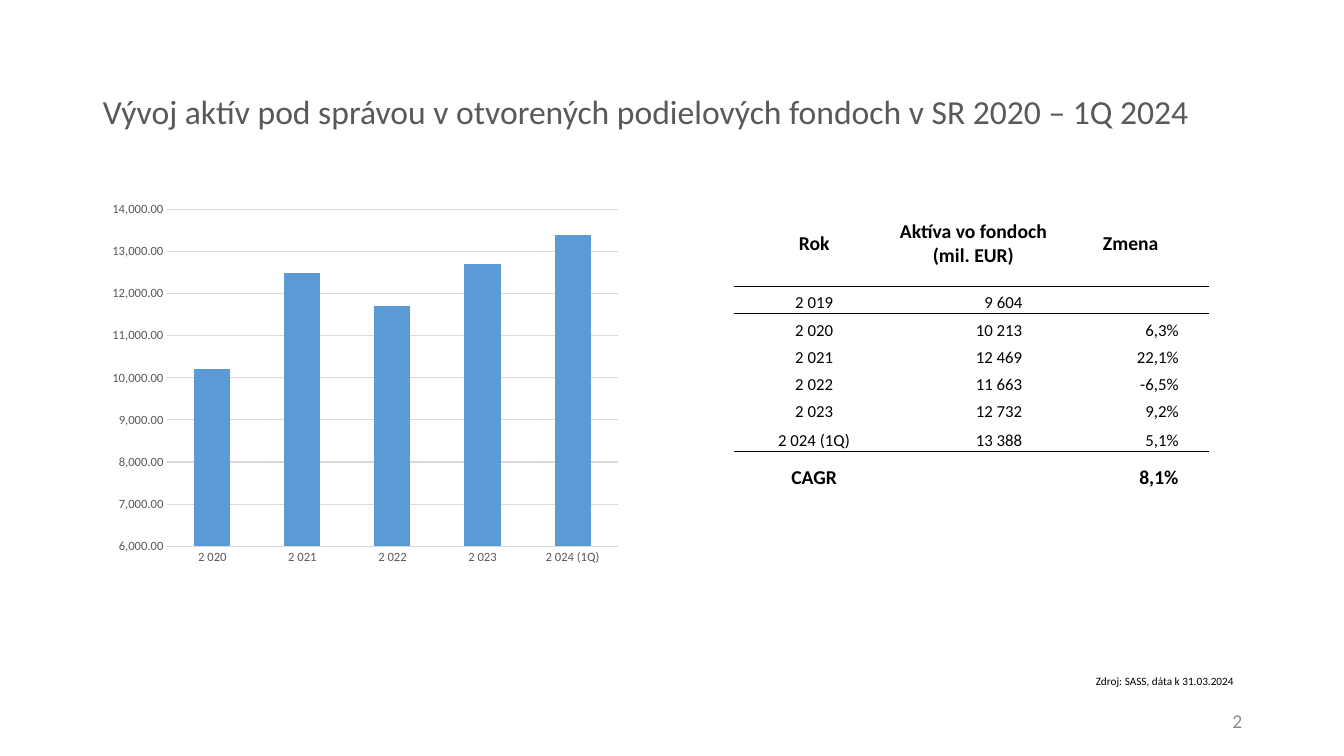
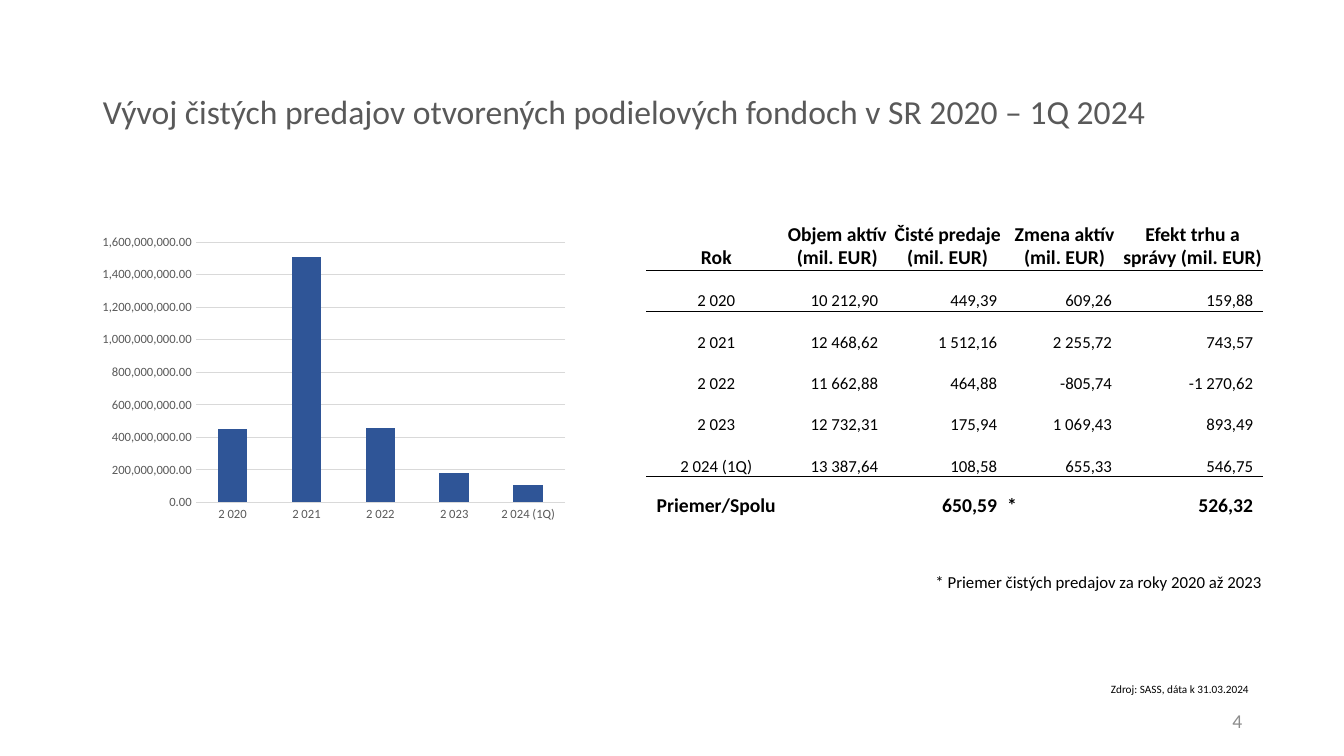
from dataclasses import dataclass

import pptx
import pptx.chart.data
import pptx.dml.color
import pptx.enum.chart
import pptx.enum.text
import pptx.util
from lxml import etree
from pptx.oxml.ns import qn

Inches = pptx.util.Inches
Pt = pptx.util.Pt
Align = pptx.enum.text.PP_ALIGN
Anchor = pptx.enum.text.MSO_ANCHOR


@dataclass(frozen=True)
class Theme:
    font: str = "Calibri"
    ink: str = "000000"
    grey: str = "595959"
    page_grey: str = "8C8C8C"
    grid: str = "D9D9D9"
    light_blue: str = "5B9BD5"
    dark_blue: str = "2F5597"
    title_size: int = 24
    strong_size: int = 14
    body_size: int = 12
    axis_size: int = 9
    source_size: int = 8


THEME = Theme()
PLAIN_TABLE_STYLE = "{2D5ABB26-0587-4C30-8999-92F81FD0307C}"
YEARS = ["2 020", "2 021", "2 022", "2 023", "2 024 (1Q)"]
SOURCE = "Zdroj: SASS, dáta k 31.03.2024"


def rgb(value):
    return pptx.dml.color.RGBColor.from_string(value)


def set_font(font, size, color, bold=False):
    font.name = THEME.font
    font.size = Pt(size)
    font.bold = bold
    font.color.rgb = rgb(color)


def write_text(frame, text, *, size, color=THEME.ink, bold=False,
               align=Align.LEFT, line_spacing=None):
    """Fill a text frame, one paragraph per line of text."""
    for index, line in enumerate(text.split("\n")):
        paragraph = frame.add_paragraph() if index else frame.paragraphs[0]
        paragraph.alignment = align
        if line_spacing:
            paragraph.line_spacing = line_spacing
        if line:
            run = paragraph.add_run()
            run.text = line
            set_font(run.font, size, color, bold)
        else:
            # An empty cell keeps the row at its own text size
            etree.SubElement(paragraph._p, qn("a:endParaRPr"), sz=str(size * 100))


def add_title(slide, text):
    title = slide.shapes.title
    title.left, title.top = Inches(0.92), Inches(0.4)
    title.width, title.height = Inches(11.94), Inches(1.45)
    frame = title.text_frame
    frame.auto_size = pptx.enum.text.MSO_AUTO_SIZE.NONE
    frame.vertical_anchor = Anchor.MIDDLE
    write_text(frame, text, size=THEME.title_size, color=THEME.grey,
               line_spacing=0.9)


def add_label(slide, text, box, anchor=Anchor.TOP, **text_format):
    frame = slide.shapes.add_textbox(*map(Inches, box)).text_frame
    frame.word_wrap = True
    frame.vertical_anchor = anchor
    write_text(frame, text, **text_format)


def add_column_chart(slide, box, name, values, color, scale):
    """Draw one series by year; scale is minimum, maximum and step."""
    data = pptx.chart.data.CategoryChartData(number_format="#,##0.00")
    data.categories = YEARS
    data.add_series(name, values)
    chart = slide.shapes.add_chart(
        pptx.enum.chart.XL_CHART_TYPE.COLUMN_CLUSTERED,
        *map(Inches, box), data).chart
    chart.has_title = False
    chart.has_legend = False
    set_font(chart.font, 10, THEME.ink)

    # Bars
    plot = chart.plots[0]
    plot.gap_width = 150
    plot.vary_by_categories = False
    fill = plot.series[0].format.fill
    fill.solid()
    fill.fore_color.rgb = rgb(color)

    # Axes
    for axis in (chart.category_axis, chart.value_axis):
        axis.major_tick_mark = pptx.enum.chart.XL_TICK_MARK.NONE
        axis.minor_tick_mark = pptx.enum.chart.XL_TICK_MARK.NONE
        axis.format.line.fill.background()
        set_font(axis.tick_labels.font, THEME.axis_size, THEME.grey)
    value_axis = chart.value_axis
    value_axis.minimum_scale, value_axis.maximum_scale, value_axis.major_unit = scale
    value_axis.tick_labels.number_format = "#,##0.00"
    value_axis.tick_labels.number_format_is_linked = False
    grid_line = value_axis.major_gridlines.format.line
    grid_line.color.rgb = rgb(THEME.grid)
    grid_line.width = Pt(0.75)


def add_rule(cell, side, width):
    line = etree.SubElement(cell._tc.get_or_add_tcPr(), qn(f"a:{side}"),
                            w=str(Pt(width)))
    fill = etree.SubElement(line, qn("a:solidFill"))
    etree.SubElement(fill, qn("a:srgbClr"), val=THEME.ink)


def add_year_table(slide, position, widths, heights, rows, *,
                   header_anchor, right_inset, total_rule):
    """Header, rows by year and a total, with rules after header and years."""
    total_row = len(rows) - 1
    rules = {0: 1, total_row - 1: total_rule}
    left, top = map(Inches, position)
    table = slide.shapes.add_table(
        len(rows), len(widths), left, top,
        Inches(sum(widths)), Inches(sum(heights))).table
    table.first_row = table.horz_banding = False
    table._tbl.tblPr.find(qn("a:tableStyleId")).text = PLAIN_TABLE_STYLE
    for column, width in zip(table.columns, widths):
        column.width = Inches(width)
    for row, height in zip(table.rows, heights):
        row.height = Inches(height)

    for r, row in enumerate(rows):
        strong = r in (0, total_row)
        for c, text in enumerate(row):
            cell = table.cell(r, c)
            if r - 1 in rules:
                add_rule(cell, "lnT", rules[r - 1])
            if r in rules:
                add_rule(cell, "lnB", rules[r])
            cell.fill.background()
            if text == "*":
                align = Align.LEFT
            elif r == 0 or c == 0:
                align = Align.CENTER
            else:
                align = Align.RIGHT
            cell.margin_left = cell.margin_top = cell.margin_bottom = 0
            cell.margin_right = Inches(right_inset if align == Align.RIGHT else 0)
            cell.vertical_anchor = Anchor.BOTTOM if r else header_anchor
            write_text(cell.text_frame, text, bold=strong, align=align,
                       size=THEME.strong_size if strong else THEME.body_size)


def add_fund_slide(prs, title, page, source_position):
    slide = prs.slides.add_slide(prs.slide_layouts[5])
    add_title(slide, title)
    add_label(slide, page, (9.42, 6.95, 3, 0.4), Anchor.MIDDLE,
              size=THEME.strong_size, color=THEME.page_grey, align=Align.RIGHT)
    add_label(slide, SOURCE, (*source_position, 1.65, 0.24),
              size=THEME.source_size)
    return slide


def add_assets_slide(prs):
    slide = add_fund_slide(
        prs,
        "Vývoj aktív pod správou v otvorených podielových fondoch v SR 2020 – 1Q 2024",
        "2", (10.77, 6.64))
    add_column_chart(slide, (1.01, 1.93, 5.22, 3.75), "Aktíva vo fondoch",
                     [10200, 12500, 11700, 12700, 13400],
                     THEME.light_blue, (6000, 14000, 1000))
    assets = ["10 213", "12 469", "11 663", "12 732", "13 388"]
    changes = ["6,3%", "22,1%", "-6,5%", "9,2%", "5,1%"]
    rows = [("Rok", "Aktíva vo fondoch\n(mil. EUR)", "Zmena"),
            ("2 019", "9 604", ""),
            *zip(YEARS, assets, changes),
            ("CAGR", "", "8,1%")]
    add_year_table(slide, (7.28, 2), [1.59, 1.57, 1.55],
                   [0.84] + [0.27] * 5 + [0.29, 0.38], rows,
                   header_anchor=Anchor.MIDDLE, right_inset=0.3, total_rule=1)


def add_sales_slide(prs):
    slide = add_fund_slide(
        prs,
        "Vývoj čistých predajov otvorených podielových fondoch v SR 2020 – 1Q 2024",
        "4", (10.92, 6.72))
    add_column_chart(slide, (0.92, 2.27, 4.78, 2.96), "Čisté predaje",
                     [450e6, 1510e6, 460e6, 180e6, 110e6],
                     THEME.dark_blue, (0, 1600e6, 200e6))
    assets = ["10 212,90", "12 468,62", "11 662,88", "12 732,31", "13 387,64"]
    sales = ["449,39", "1 512,16", "464,88", "175,94", "108,58"]
    changes = ["609,26", "2 255,72", "-805,74", "1 069,43", "655,33"]
    effects = ["159,88", "743,57", "-1 270,62", "893,49", "546,75"]
    rows = [("Rok", "Objem aktív (mil. EUR)", "Čisté predaje (mil. EUR)",
             "Zmena aktív (mil. EUR)", "Efekt trhu a správy (mil. EUR)"),
            *zip(YEARS, assets, sales, changes, effects),
            ("Priemer/Spolu", "", "650,59", "*", "526,32")]
    add_year_table(slide, (6.41, 1.85), [1.39, 1.01, 1.18, 1.14, 1.4],
                   [0.83] + [0.41] * 6, rows,
                   header_anchor=Anchor.BOTTOM, right_inset=0.1, total_rule=0.5)
    add_label(slide, "* Priemer čistých predajov za roky 2020 až 2023",
              (9.18, 5.62, 3.48, 0.3), size=THEME.body_size)


def main():
    prs = pptx.Presentation()
    prs.slide_width, prs.slide_height = Inches(13.33), Inches(7.5)
    add_assets_slide(prs)
    add_sales_slide(prs)
    prs.save("out.pptx")


if __name__ == "__main__":
    main()
